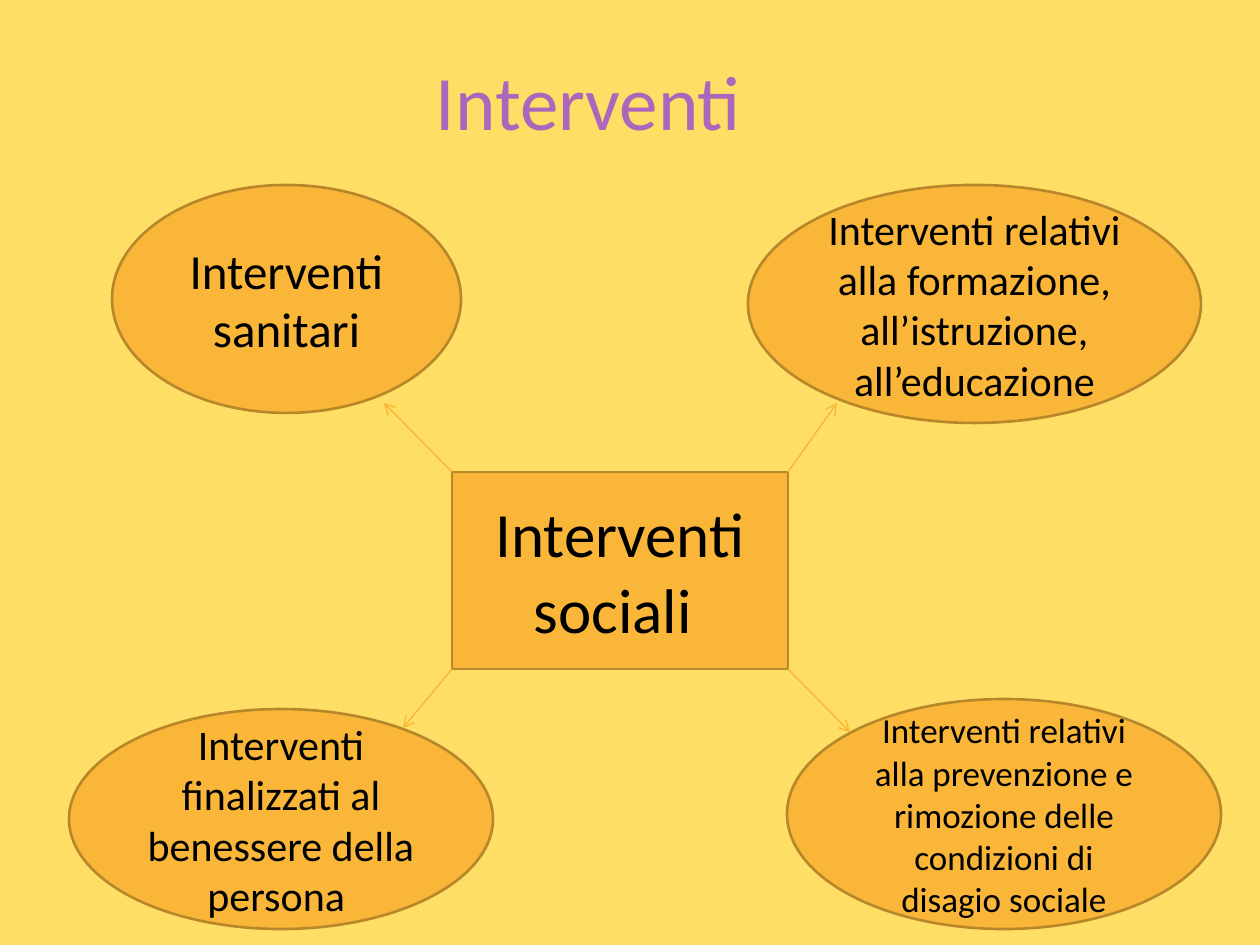
import pptx
import pptx.util
import pptx.dml.color
import pptx.enum.shapes
import pptx.enum.text
import pptx.oxml.ns
import lxml.etree

FONT = "Calibri"
COLORS = {
    "ground": "FFDE66",
    "title": "AC66BB",
    "fill": "F9B639",
    "edge": "B8872A",
    "text": "000000",
}
SHAPES = pptx.enum.shapes.MSO_SHAPE

# Central box: left, top, width, height
BOX = (452, 472, 336, 197)

# Ovals: text, frame, text size
OVALS = [
    ("Interventi sanitari", (112, 185, 349, 228), 28),
    ("Interventi relativi alla formazione, all’istruzione, all’educazione",
     (748, 185, 453, 238), 24),
    ("Interventi finalizzati al benessere della persona ",
     (69, 709, 424, 220), 24),
    ("Interventi relativi alla prevenzione e rimozione delle condizioni "
     "di disagio sociale", (787, 699, 434, 230), 20),
]

# Arrow tips, keyed by the box corner they leave (right?, bottom?)
TIPS = {
    (0, 0): (384, 403),
    (1, 0): (837, 403),
    (1, 1): (850, 732),
    (0, 1): (403, 728),
}


def px(count):
    return pptx.util.Emu(round(count * 914400 / 126))


def color(name):
    return pptx.dml.color.RGBColor.from_string(COLORS[name])


def set_text(shape, text, size, tint):
    frame = shape.text_frame
    frame.text = text
    frame.word_wrap = True
    frame.vertical_anchor = pptx.enum.text.MSO_ANCHOR.MIDDLE
    for para in frame.paragraphs:
        para.alignment = pptx.enum.text.PP_ALIGN.CENTER
        for run in para.runs:
            run.font.name = FONT
            run.font.size = pptx.util.Pt(size)
            run.font.color.rgb = color(tint)


def add_title(slide, text, frame):
    title = slide.shapes.title
    title.left, title.top, title.width, title.height = map(px, frame)
    set_text(title, text, 44, "title")


def add_node(slide, kind, text, frame, size):
    node = slide.shapes.add_shape(kind, *map(px, frame))
    node.shadow.inherit = False
    node.fill.solid()
    node.fill.fore_color.rgb = color("fill")
    node.line.color.rgb = color("edge")
    node.line.width = pptx.util.Pt(1.5)
    set_text(node, text, size, "text")


def add_arrow(slide, start, end):
    arrow = slide.shapes.add_connector(
        pptx.enum.shapes.MSO_CONNECTOR.STRAIGHT, *map(px, start + end))
    arrow.line.color.rgb = color("fill")
    arrow.line.width = pptx.util.Pt(0.79)
    # Open arrowhead, no shadow
    qn = pptx.oxml.ns.qn
    line = arrow.line._get_or_add_ln()
    lxml.etree.SubElement(line, qn("a:tailEnd"), type="arrow")
    lxml.etree.SubElement(arrow._element.spPr, qn("a:effectLst"))


def main():
    deck = pptx.Presentation()
    deck.slide_width, deck.slide_height = px(1260), px(945)
    slide = deck.slides.add_slide(deck.slide_layouts[5])
    ground = slide.background.fill
    ground.solid()
    ground.fore_color.rgb = color("ground")

    add_title(slide, "Interventi", (74, 32, 1029, 136))

    # Centre and its four branches
    add_node(slide, SHAPES.RECTANGLE, "Interventi sociali ", BOX, 36)
    for text, frame, size in OVALS:
        add_node(slide, SHAPES.OVAL, text, frame, size)

    # Arrows from the corners of the box
    left, top, width, height = BOX
    for (right, low), tip in TIPS.items():
        add_arrow(slide, (left + right * width, top + low * height), tip)

    deck.save("out.pptx")


if __name__ == "__main__":
    main()
